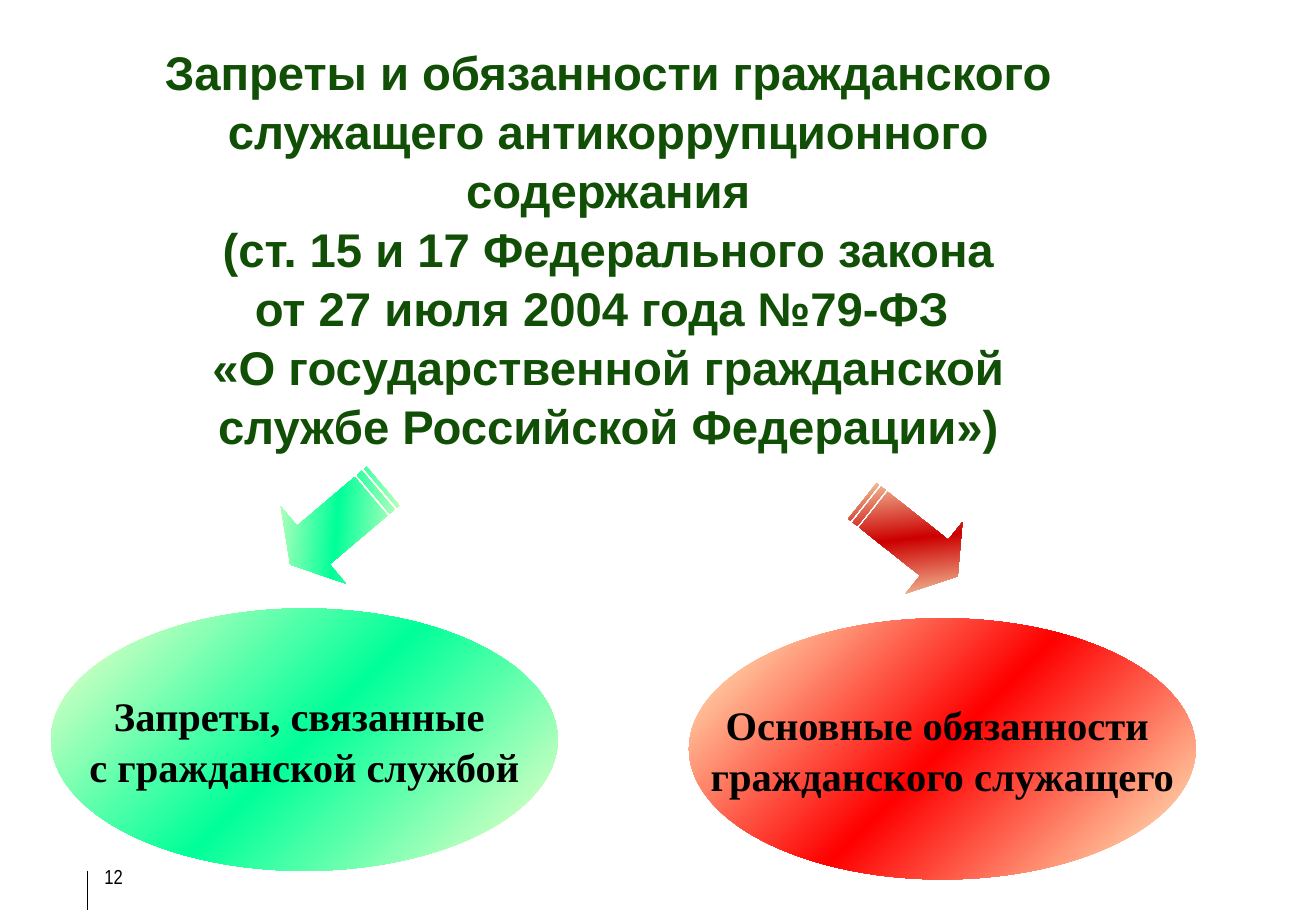
"""Build the slide on the prohibitions and duties of a civil servant."""
from copy import deepcopy
from dataclasses import dataclass

from lxml.etree import SubElement
from pptx import Presentation
from pptx.dml.color import RGBColor
from pptx.enum.dml import MSO_THEME_COLOR as Theme
from pptx.enum.shapes import MSO_CONNECTOR as Connector, MSO_SHAPE as Preset
from pptx.enum.text import MSO_ANCHOR as Anchor, MSO_AUTO_SIZE as AutoSize, PP_ALIGN as Align
from pptx.oxml.ns import qn
from pptx.shapes.autoshape import Shape
from pptx.slide import Slide
from pptx.text.text import TextFrame
from pptx.util import Inches, Pt

COLORS = {
    "title": "104F05",
    "text": "000000",
    "frame": "FFFFFF",
    "cream": "FFFFCC",
    "green": "00FF99",
    "red": "FE0000",
    "dark_red": "CC0000",
}
TITLE_LINES = (
    "Запреты и обязанности гражданского служащего антикоррупционного содержания",
    "(ст. 15 и 17 Федерального закона",
    "от 27 июля 2004 года №79-ФЗ ",
    "«О государственной гражданской службе Российской Федерации»)",
)


@dataclass(frozen=True)
class Box:
    """Position and size in inches."""
    left: float
    top: float
    width: float
    height: float

    def lengths(self) -> tuple[Inches, ...]:
        """Return the four values as lengths."""
        return tuple(map(Inches, (self.left, self.top, self.width, self.height)))


@dataclass(frozen=True)
class TextStyle:
    """Look shared by all paragraphs of one text."""
    font: str
    size: float
    color: str
    bold: bool = True
    align: Align = Align.CENTER
    spacing: float = 1.0


@dataclass(frozen=True)
class Oval:
    """Labelled ellipse."""
    box: Box
    color: str
    lines: tuple[str, ...]


@dataclass(frozen=True)
class Arrow:
    """Striped arrow turned towards an oval."""
    box: Box
    color: str
    rotation: float
    head: float


TITLE_STYLE = TextStyle("Arial", 28, "title", spacing=1.04)
OVAL_STYLE = TextStyle("Times New Roman", 24, "text", spacing=1.05)
NUMBER_STYLE = TextStyle("Arial Narrow", 12, "text", bold=False, align=Align.RIGHT)
OVALS = (
    Oval(Box(0.42, 5.01, 4.17, 2.16), "green", ("Запреты, связанные ", "с гражданской службой")),
    Oval(Box(5.67, 5.09, 4.17, 2.15), "red", ("Основные обязанности ", "гражданского служащего")),
)
ARROWS = (
    Arrow(Box(2.27, 3.91, 1, 0.83), "green", 139.8, 0.3),
    Arrow(Box(6.99, 4.06, 1, 0.75), "dark_red", 38.4, 0.33),
)


def rgb(name: str) -> RGBColor:
    """Look up a colour by name."""
    return RGBColor.from_string(COLORS[name])


def write_lines(frame: TextFrame, lines: tuple[str, ...], style: TextStyle) -> None:
    """Write one formatted paragraph per line."""
    frame.text = "\n".join(lines)
    for para in frame.paragraphs:
        para.alignment = style.align
        para.line_spacing = style.spacing
        para.space_before = Pt(0)
        para.font.name = style.font
        para.font.size = Pt(style.size)
        para.font.bold = style.bold
        para.font.color.rgb = rgb(style.color)


def add_glowing_shape(page: Slide, preset: Preset, box: Box, color: str) -> Shape:
    """Add a borderless shape with a diagonal cream, colour, cream gradient."""
    shape = page.shapes.add_shape(preset, *box.lengths())
    shape.shadow.inherit = False
    shape.line.fill.background()
    shape.fill.gradient()
    shape.fill.gradient_angle = 315
    stops = shape._element.spPr.find(".//" + qn("a:gsLst"))
    stops.insert(1, deepcopy(stops[0]))
    names = ("cream", color, "cream")
    for index, (stop, name) in enumerate(zip(shape.fill.gradient_stops, names)):
        stop.color.theme_color = Theme.ACCENT_1
        stop.color.rgb = rgb(name)
        stop.position = index / 2
    return shape


def add_title(page: Slide) -> None:
    """Place and fill the title."""
    title = page.shapes.title
    title.left, title.top, title.width, title.height = Box(0.92, 0.35, 8.17, 3.37).lengths()
    frame = title.text_frame
    frame.word_wrap = True
    frame.auto_size = AutoSize.NONE
    frame.vertical_anchor = Anchor.MIDDLE
    write_lines(frame, TITLE_LINES, TITLE_STYLE)


def add_oval(page: Slide, oval: Oval) -> None:
    """Add an ellipse with its label."""
    frame = add_glowing_shape(page, Preset.OVAL, oval.box, oval.color).text_frame
    frame.word_wrap = False
    frame.vertical_anchor = Anchor.MIDDLE
    write_lines(frame, oval.lines, OVAL_STYLE)


def add_arrow(page: Slide, arrow: Arrow) -> None:
    """Add a rotated striped arrow."""
    shape = add_glowing_shape(page, Preset.STRIPED_RIGHT_ARROW, arrow.box, arrow.color)
    shape.adjustments[0] = 0.5
    shape.adjustments[1] = arrow.head
    shape.rotation = arrow.rotation


def add_page_number(page: Slide) -> None:
    """Add the bulleted page number and the rule beside it."""
    rule = page.shapes.add_connector(
        Connector.STRAIGHT, Inches(0.72), Inches(7.17), Inches(0.72), Inches(7.5))
    rule.line.color.rgb = rgb("text")
    rule.line.width = Pt(0.75)
    SubElement(rule._element.spPr, qn("a:effectLst"))
    number = page.shapes.add_textbox(*Box(0, 7.07, 1.11, 0.43).lengths())
    number.line.color.rgb = rgb("frame")
    number.line.width = Pt(0.75)
    frame = number.text_frame
    frame.word_wrap = True
    properties = frame.paragraphs[0]._p.get_or_add_pPr()
    properties.set("marL", str(Inches(0.24)))
    properties.set("indent", str(-Inches(0.24)))
    SubElement(properties, qn("a:buFont"), typeface="Arial")
    SubElement(properties, qn("a:buChar"), char="•")
    write_lines(frame, ("12",), NUMBER_STYLE)


def main() -> None:
    """Build and save the deck."""
    deck = Presentation()
    deck.slide_width, deck.slide_height = Inches(10.83), Inches(7.5)
    page = deck.slides.add_slide(deck.slide_layouts[5])
    add_page_number(page)
    for oval in OVALS:
        add_oval(page, oval)
    for arrow in ARROWS:
        add_arrow(page, arrow)
    add_title(page)
    deck.save("out.pptx")


if __name__ == "__main__":
    main()
